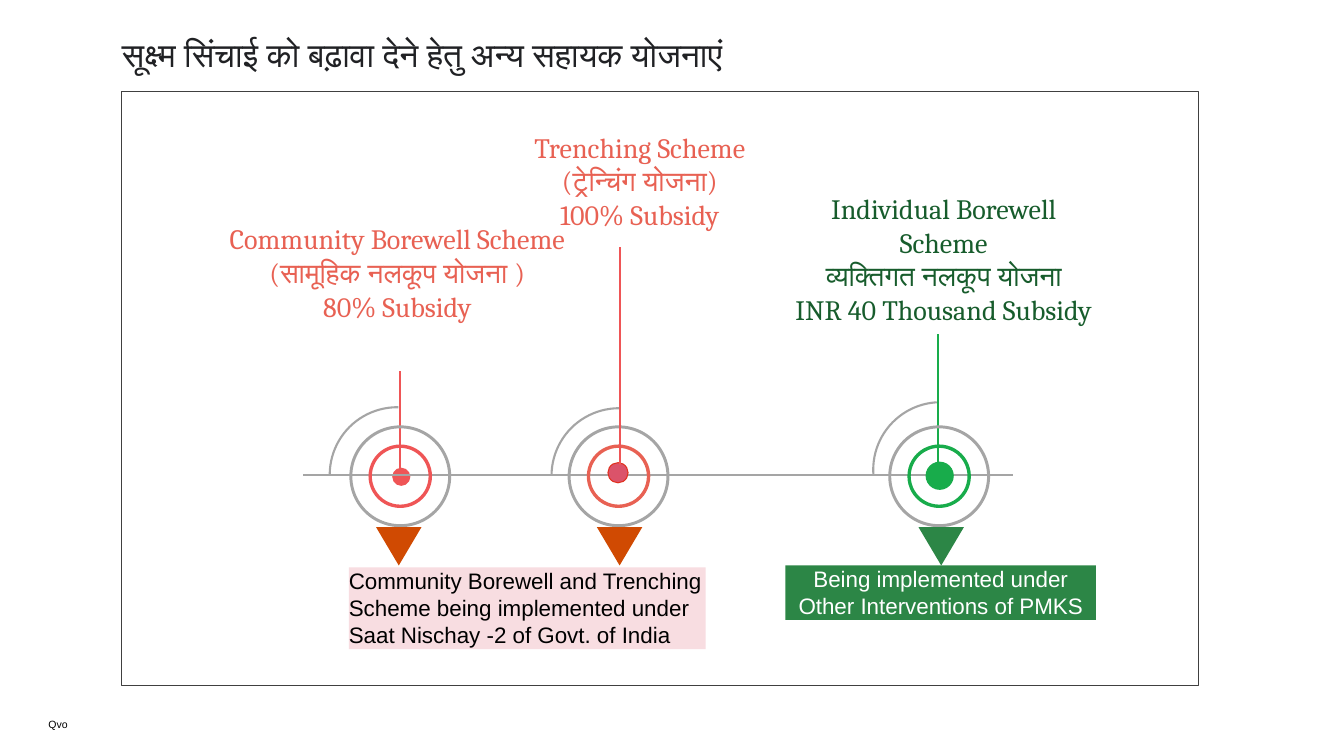
from lxml import etree
from pptx import Presentation, util as u
from pptx.dml.color import RGBColor
from pptx.enum import shapes, text
from pptx.oxml.ns import qn

CELL = 0.1  # inches per grid column and row
GREY, RED, CORAL, GREEN = "A5A5A5", "EF5556", "E86153", "18AC4B"
RUST, LEAF, PINE = "D04A02", "2C8646", "175C2C"
LEFT, MID = text.PP_ALIGN.LEFT, text.PP_ALIGN.CENTER
KIND = shapes.MSO_SHAPE


def tint(code):
    return RGBColor.from_string(code)


def cells(*nums):
    return [u.Inches(n * CELL) for n in nums]


class Board:
    """Draws on one slide; lengths are grid cells."""

    def __init__(self, deck):
        self.slide = deck.slides.add_slide(deck.slide_layouts[5])
        self.items = self.slide.shapes

    def fill_text(self, frame, lines, font, size, color, align=LEFT,
                  pad=(0, 0), after=0, lead=None,
                  anchor=text.MSO_ANCHOR.TOP):
        frame.word_wrap = True
        frame.auto_size = text.MSO_AUTO_SIZE.NONE
        frame.vertical_anchor = anchor
        frame.margin_left = frame.margin_right = cells(pad[0])[0]
        frame.margin_top = frame.margin_bottom = cells(pad[1])[0]
        for i, line in enumerate(lines):
            para = frame.add_paragraph() if i else frame.paragraphs[0]
            para.alignment = align
            para.space_before, para.space_after = u.Pt(0), u.Pt(after)
            if lead:
                para.line_spacing = lead
            run = para.add_run()
            run.text = line
            run.font.name, run.font.size = font, u.Pt(size)
            run.font.color.rgb = tint(color)

    def title(self, box, line):
        head = self.items.title
        head.left, head.top, head.width, head.height = cells(*box)
        self.fill_text(head.text_frame, [line], "Calibri", 24, "202124",
                       lead=0.85)

    def label(self, box, lines, *style, **more):
        self.fill_text(self.items.add_textbox(*cells(*box)).text_frame,
                       lines, *style, **more)

    def shape(self, kind, box, fill=None, line=None, width=0.75,
              turn=0, adjust=()):
        item = self.items.add_shape(kind, *cells(*box))
        item.shadow.inherit = False
        item.rotation = turn
        for i, value in enumerate(adjust):
            item.adjustments[i] = value
        if fill:
            item.fill.solid()
            item.fill.fore_color.rgb = tint(fill)
        else:
            item.fill.background()
        if line:
            item.line.color.rgb = tint(line)
            item.line.width = u.Pt(width)
        else:
            item.line.fill.background()
        return item

    def round(self, kind, x, y, size, *style, **more):
        """Square-boxed shape centred on x, y."""
        half = size / 2
        self.shape(kind, (x - half, y - half, size, size), *style, **more)

    def line(self, x1, y1, x2, y2, color):
        item = self.items.add_connector(
            shapes.MSO_CONNECTOR.STRAIGHT, *cells(x1, y1, x2, y2))
        item.line.color.rgb = tint(color)
        item.line.width = u.Pt(1.5)
        etree.SubElement(item._element.spPr, qn("a:effectLst"))

    def axis(self, y, stops):
        for start, end in zip(stops, stops[1:]):
            self.line(start, y, end, y, GREY)

    def target(self, x, color, arc, turn):
        """Quarter arc and two rings around a hub."""
        self.round(KIND.ARC, *arc, 13.4, line=GREY, width=1.5,
                   turn=turn, adjust=(54.2, 108.53))
        self.round(KIND.DONUT, x, 47.25, 6.3, color, adjust=(0.053,))
        self.round(KIND.DONUT, x, 47.25, 10.1, GREY, adjust=(0.029,))

    def note(self, box, line, fill, color, align):
        item = self.shape(KIND.RECTANGLE, box, fill)
        self.fill_text(item.text_frame, [line], "Arial", 16, color, align,
                       after=6)


def main():
    deck = Presentation()
    deck.slide_width, deck.slide_height = u.Inches(13.33), u.Inches(7.5)
    board = Board(deck)

    board.label((4.8, 71, 59.9, 1.5), ["Qvo"], "Arial", 7.5, "000000",
                anchor=text.MSO_ANCHOR.BOTTOM)
    board.shape(KIND.RECTANGLE, (12.1, 9.1, 106.8, 58.9), line="404040")
    board.title((12.1, 4, 101.8, 3.6),
                "सूक्ष्म सिंचाई को बढ़ावा देने हेतु अन्य सहायक योजनाएं")

    schemes = [
        ((20.3, 21.3, 38.2, 14.8), CORAL,
         ["Community Borewell Scheme", "(सामूहिक नलकूप योजना )",
          "80% Subsidy"]),
        ((42, 12.2, 42.9, 11.4), CORAL,
         ["Trenching Scheme", "(ट्रेन्चिंग योजना)", "100% Subsidy"]),
        ((77.4, 18.3, 32.4, 18.2), PINE,
         ["Individual Borewell Scheme", "व्यक्तिगत नलकूप योजना",
          "INR 40 Thousand Subsidy"]),
    ]
    for box, color, lines in schemes:
        board.label(box, lines, "Cambria", 20, color, MID, pad=(1.3, 0.7))

    board.round(KIND.OVAL, 39.8, 47.3, 1.8, RED)
    board.line(39.7, 46.8, 39.7, 36.8, RED)
    board.line(93, 46.6, 93, 33.1, GREEN)
    board.axis(47.1, [30.1, 40.3, 72.9, 92.8, 100.5])

    board.target(39.7, RED, (39.4, 47.1), 90)
    board.round(KIND.OVAL, 61.3, 46.9, 2, "DB536A", "E0301E")
    board.target(61.35, CORAL, (61.4, 47.2), 90)
    board.round(KIND.OVAL, 93.2, 47.2, 2.8, GREEN)
    board.target(93.15, GREEN, (93.3, 46.6), 85.7)

    board.note((34.6, 56.3, 35.4, 8.1),
               "Community Borewell and Trenching Scheme being implemented "
               "under Saat Nischay -2 of Govt. of India",
               "F8DDE1", "000000", LEFT)
    board.note((77.9, 56.1, 30.8, 5.4),
               "Being implemented under Other Interventions of PMKS",
               LEAF, "FFFFFF", MID)

    board.line(61.5, 46.1, 61.5, 24.5, RED)
    for x, color in [(37.3, RUST), (59.2, RUST), (91.1, LEAF)]:
        board.shape(KIND.ISOSCELES_TRIANGLE, (x, 52.3, 4.5, 3.8), color,
                    turn=180)
    deck.save("out.pptx")


if __name__ == "__main__":
    main()
